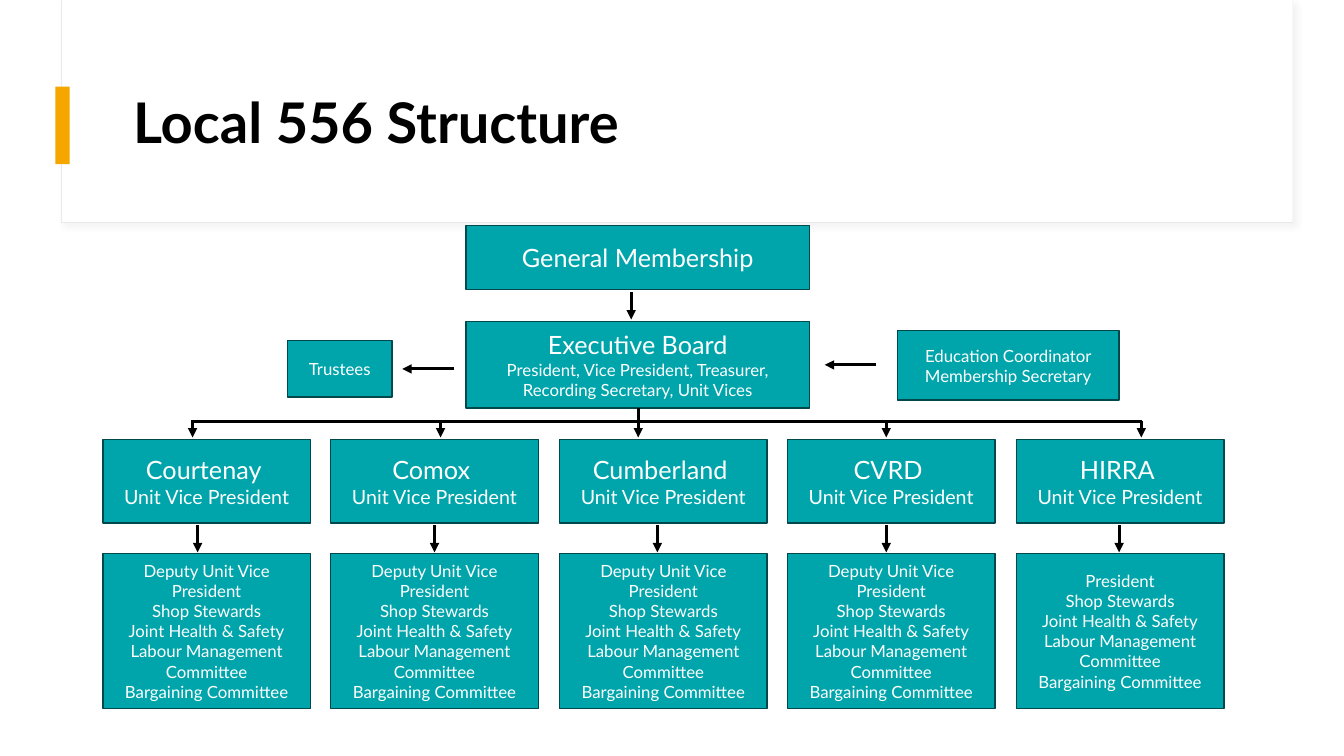
from lxml import etree
from pptx import Presentation
from pptx.dml.color import RGBColor
from pptx.enum.shapes import MSO_CONNECTOR, MSO_SHAPE
from pptx.enum.text import MSO_ANCHOR, PP_ALIGN
from pptx.oxml import parse_xml
from pptx.oxml.ns import nsdecls, qn
from pptx.util import Pt

PX = 9144
RECT = MSO_SHAPE.RECTANGLE
LINE = MSO_CONNECTOR.STRAIGHT
MID = MSO_ANCHOR.MIDDLE
LEFT, CENTER = PP_ALIGN.LEFT, PP_ALIGN.CENTER
FONT = "Lato"
HEX = {"white": "FFFFFF", "black": "000000", "teal": "00A5AB", "edge": "00484B",
       "gold": "F5A700", "frame": "E9E9E9", "shade": "D9D9D9"}
UNITS = ["Courtenay", "Comox", "Cumberland", "CVRD", "HIRRA"]
ROLES = ["Shop Stewards", "Joint Health & Safety",
         "Labour Management Committee", "Bargaining Committee"]


def color(name):
    """Return the named colour."""
    return RGBColor.from_string(HEX[name])


def scale(*sizes):
    """Turn px lengths into EMU."""
    return [size * PX for size in sizes]


def panel(shapes, box, fill, edge=None, width=1):
    """Draw a flat rectangle."""
    shape = shapes.add_shape(RECT, *scale(*box))
    shape.shadow.inherit = False
    shape.fill.solid()
    shape.fill.fore_color.rgb = color(fill)
    if edge:
        shape.line.color.rgb = color(edge)
        shape.line.width = Pt(width)
    else:
        shape.line.fill.background()
    return shape


def write(para, text, size, ink, align, bold=False):
    """Add one styled run to a paragraph."""
    para.alignment = align
    run = para.add_run()
    run.text = text
    run.font.name = FONT
    run.font.size = Pt(size)
    run.font.bold = bold
    run.font.color.rgb = color(ink)


def card(shapes, box, lines):
    """Draw a teal box with centred lines of text and size."""
    frame = panel(shapes, box, "teal", "edge").text_frame
    frame.word_wrap = True
    frame.vertical_anchor = MID
    for i, (text, size) in enumerate(lines):
        para = frame.add_paragraph() if i else frame.paragraphs[0]
        write(para, text, size, "white", CENTER)


def link(shapes, x, y, across, down, tip=True):
    """Draw a black line, with an arrow tip if asked."""
    line = shapes.add_connector(LINE, *scale(x, y, x + across, y + down))
    line.line.color.rgb = color("black")
    line.line.width = Pt(2.25)
    if tip:
        etree.SubElement(line.line._get_or_add_ln(), qn("a:tailEnd"), type="triangle")
    etree.SubElement(line._element.spPr, qn("a:effectLst"))


def header(slide, box):
    """Place the framed title and its gold bar."""
    x, y, w, h = box
    frame = panel(slide.shapes, box, "white", "frame", 0.75)
    glow = parse_xml(
        f'<a:outerShdw {nsdecls("a")} blurRad="50800" dist="38100" dir="2700000">'
        f'<a:srgbClr val="{HEX["shade"]}"><a:alpha val="30000"/></a:srgbClr></a:outerShdw>')
    frame._element.spPr.find(qn("a:effectLst")).append(glow)
    panel(slide.shapes, (x + 1, y, w - 1, h - 1), "white")
    panel(slide.shapes, (x - 6, y + 86, 14, 77), "gold")
    title = slide.shapes.title
    title.left, title.top, title.width, title.height = scale(x + 61, y + 60, 1112, 129)
    text = title.text_frame
    text.word_wrap = True
    text.vertical_anchor = MID
    text.paragraphs[0].line_spacing = 0.9
    write(text.paragraphs[0], "Local 556 Structure", 40, "black", LEFT, True)
    slide.shapes._spTree.append(title._element)


def board(slide, box):
    """Place the membership, the board and its side roles."""
    x, y, w, h = box
    shapes = slide.shapes
    mid = x + 177
    card(shapes, (mid, y, 341, 63), [("General Membership", 18)])
    card(shapes, (mid, y + 95, 341, h - 95), [
        ("Executive Board", 18),
        ("President, Vice President, Treasurer, Recording Secretary, Unit Vices", 12)])
    card(shapes, (x + w - 220, y + 104, 220, 69),
         [("Education Coordinator Membership Secretary", 12)])
    card(shapes, (x, y + 114, 104, 56), [("Trustees", 12)])
    link(shapes, mid + 164, y + 66, 0, 27)
    link(shapes, x + 584, y + 138, -51, 0)
    link(shapes, x + 165, y + 142, -51, 0)


def tree(slide, box):
    """Branch from the board to each unit."""
    x, y, w, h = box
    shapes = slide.shapes.add_group_shape().shapes
    link(shapes, x + w, y + 13, -w, 0, False)
    for across, top in [(2, 13), (248, 13), (444, 0), (690, 13), (w - 1, 13)]:
        link(shapes, x + across, y + top, 0, h - top)


def units(slide, box):
    """Place a column of vice president and roles for each unit."""
    x, y, w, h = box
    wide = 206
    tips = [94, 329, 550, 777, 1008]
    for i, (name, tip) in enumerate(zip(UNITS, tips)):
        left = x + i * (w - wide) // (len(UNITS) - 1)
        first = "President" if name == "HIRRA" else "Deputy Unit Vice President"
        card(slide.shapes, (left, y, wide, 83),
             [(name + " ", 18), ("Unit Vice President", 14)])
        card(slide.shapes, (left, y + 113, wide, h - 113),
             [(role, 12) for role in [first, *ROLES]])
        link(slide.shapes, x + tip, y + 85, 0, 27)


def main():
    """Build and save the slide."""
    deck = Presentation()
    deck.slide_width, deck.slide_height = scale(1333, 750)
    slide = deck.slides.add_slide(deck.slide_layouts[5])
    header(slide, (61, 0, 1221, 221))
    board(slide, (285, 224, 825, 181))
    tree(slide, (189, 405, 944, 29))
    units(slide, (102, 436, 1112, 267))
    deck.save("out.pptx")


if __name__ == "__main__":
    main()
